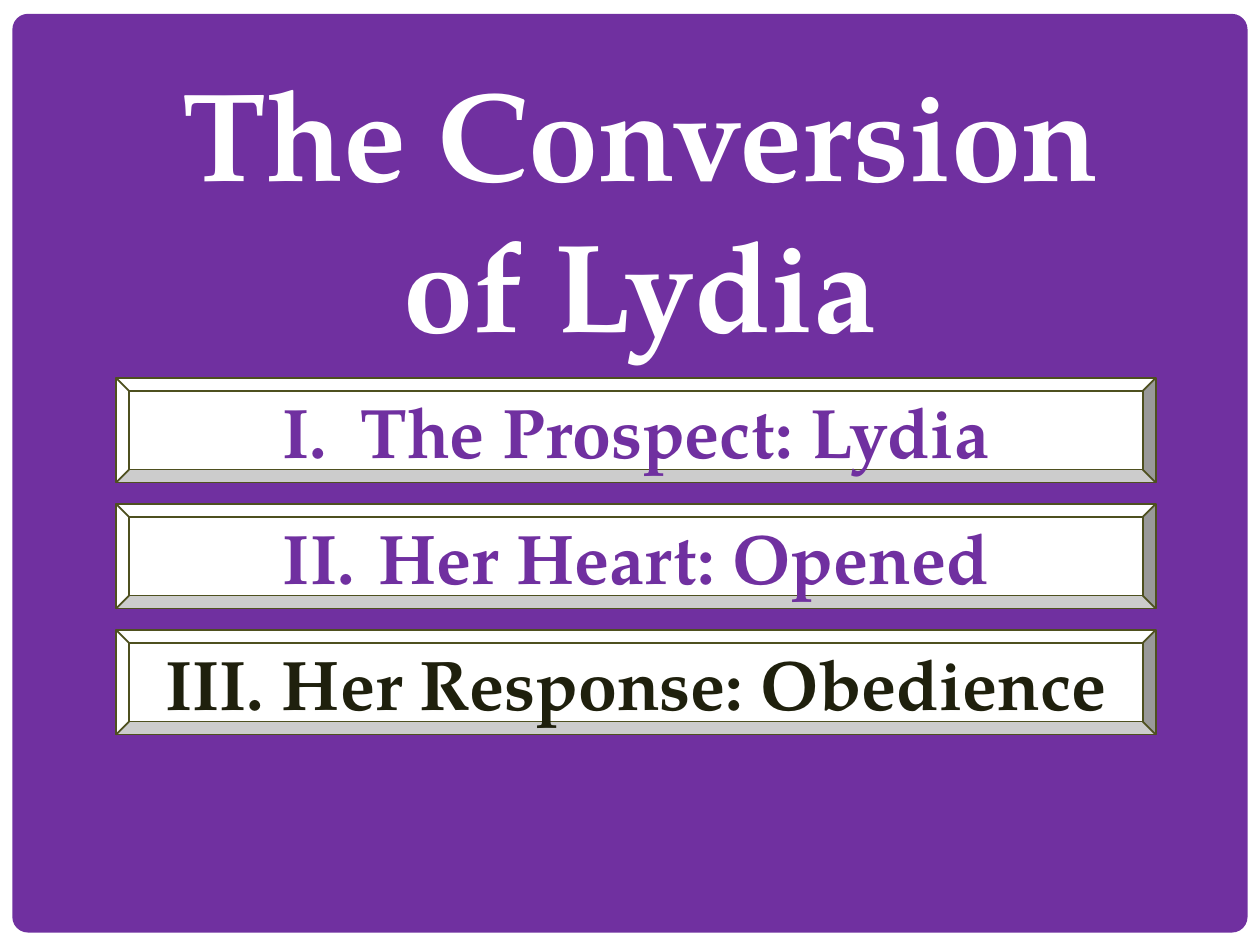
"""Build the title slide with three numbered headings on bevelled bars."""
from lxml import etree
from pptx import Presentation
from pptx.dml.color import RGBColor
from pptx.enum.shapes import MSO_SHAPE
from pptx.enum.text import MSO_ANCHOR, MSO_AUTO_SIZE, PP_ALIGN
from pptx.oxml.ns import qn
from pptx.util import Cm, Pt

ROUNDED = MSO_SHAPE.ROUNDED_RECTANGLE
BEVEL = MSO_SHAPE.BEVEL
TOP, MIDDLE = MSO_ANCHOR.TOP, MSO_ANCHOR.MIDDLE
CENTER = PP_ALIGN.CENTER
NO_AUTOFIT = MSO_AUTO_SIZE.NONE

PURPLE = RGBColor(0x70, 0x30, 0xA0)
WHITE = RGBColor(0xFF, 0xFF, 0xFF)
OLIVE = RGBColor(0x4E, 0x50, 0x1F)
DARK_OLIVE = RGBColor(0x1F, 0x20, 0x0D)

FONT = "TeX Gyre Pagella"
TITLE_LINES = ["The Conversion", "of Lydia"]
HEADINGS = [
    ("The Prospect: Lydia", PURPLE),
    (" Her Heart: Opened", PURPLE),
    (" Her Response: Obedience", DARK_OLIVE),
]
FIRST_BAR_TOP = 7.62
BAR_PITCH = 2.54


class SlideBuilder:
    def __init__(self, presentation):
        self.slide = presentation.slides.add_slide(presentation.slide_layouts[5])
        self.shapes = self.slide.shapes

    def background(self, color):
        fill = self.slide.background.fill
        fill.solid()
        fill.fore_color.rgb = color

    def style(self, paragraph, size, color):
        paragraph.alignment = CENTER
        font = paragraph.font
        font.name = FONT
        font.size = Pt(size)
        font.bold = True
        font.color.rgb = color

    def box(self, kind, left, top, width, height, fill):
        shape = self.shapes.add_shape(kind, Cm(left), Cm(top), Cm(width), Cm(height))
        shape.shadow.inherit = False
        shape.fill.solid()
        shape.fill.fore_color.rgb = fill
        return shape

    def panel(self):
        shape = self.box(ROUNDED, 0.25, 0.28, 24.9, 18.52, PURPLE)
        shape.adjustments[0] = 0.017
        shape.line.fill.background()

    def title(self, lines):
        title = self.shapes.title
        title.left, title.top = Cm(3.28), Cm(0.99)
        title.width, title.height = Cm(19.25), Cm(6.4)
        self.shapes._spTree.append(title._element)
        frame = title.text_frame
        frame.text = "\n".join(lines)
        frame.word_wrap = False
        frame.auto_size = NO_AUTOFIT
        frame.vertical_anchor = TOP
        for paragraph in frame.paragraphs:
            self.style(paragraph, 72, WHITE)

    def heading_bar(self, number, text, color):
        top = FIRST_BAR_TOP + (number - 1) * BAR_PITCH
        shape = self.box(BEVEL, 2.34, top, 20.96, 2.11, WHITE)
        shape.line.color.rgb = OLIVE
        shape.line.width = Pt(1)
        frame = shape.text_frame
        frame.text = text
        frame.word_wrap = True
        frame.vertical_anchor = MIDDLE
        paragraph = frame.paragraphs[0]
        self.style(paragraph, 40, color)
        self.number(paragraph, number)

    def number(self, paragraph, start):
        properties = paragraph._p.get_or_add_pPr()
        indent = Cm(1.57)
        properties.set("marL", str(indent))
        properties.set("indent", str(-indent))
        bullet = etree.Element(qn("a:buAutoNum"), type="romanUcPeriod", startAt=str(start))
        properties.insert(0, bullet)


def main():
    presentation = Presentation()
    presentation.slide_width = Cm(25.4)
    presentation.slide_height = Cm(19.05)
    builder = SlideBuilder(presentation)
    builder.background(WHITE)
    builder.panel()
    builder.title(TITLE_LINES)
    for number, (text, color) in enumerate(HEADINGS, start=1):
        builder.heading_bar(number, text, color)
    presentation.save("out.pptx")


if __name__ == "__main__":
    main()
